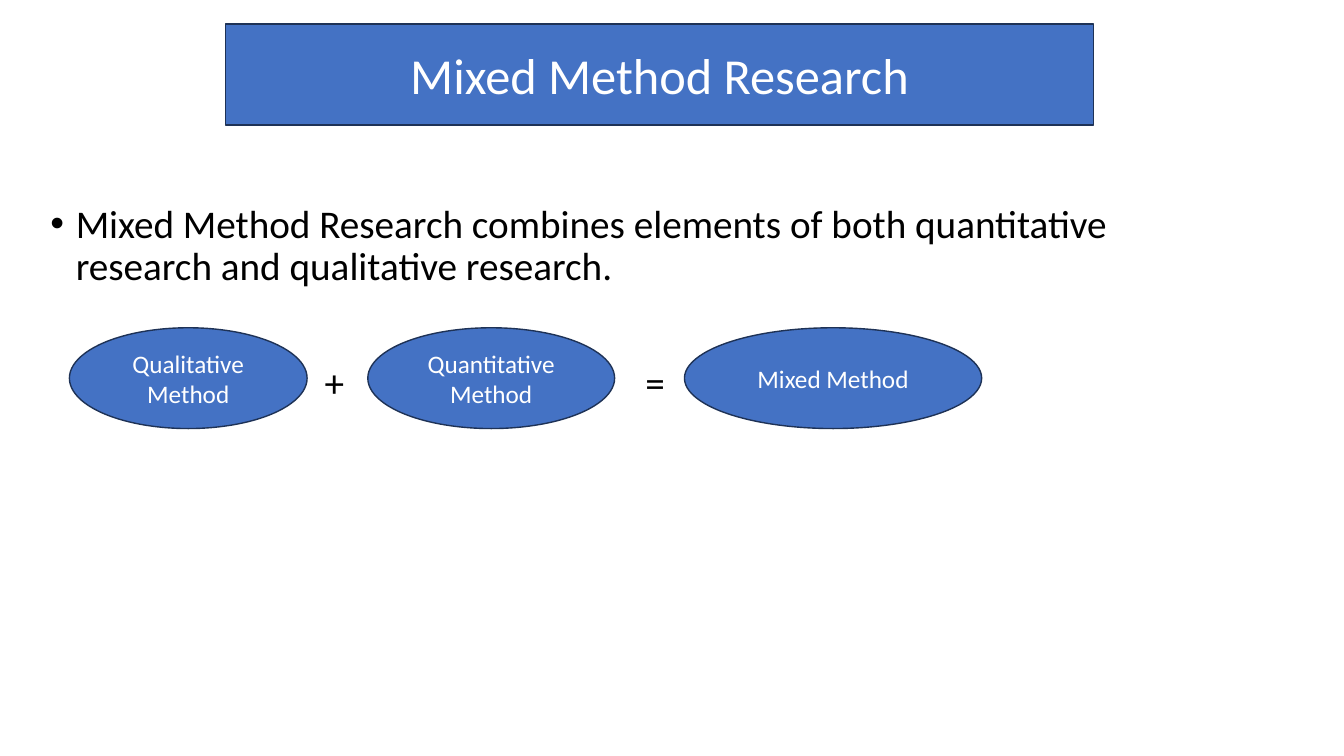
from dataclasses import dataclass

from lxml import etree
from pptx import Presentation
from pptx import util as u
from pptx.dml.color import RGBColor
from pptx.enum import shapes, text
from pptx.oxml.ns import qn


@dataclass(frozen=True)
class Theme:
    """Colours, font and type sizes of the slide."""
    font: str = "Calibri"
    fill: str = "4472C4"
    outline: str = "1E3256"
    light: str = "FFFFFF"
    dark: str = "000000"
    title_size: int = 36
    body_size: int = 28
    label_size: int = 18


class SlideBuilder:
    """Draws styled elements on the current slide."""

    def __init__(self, slide, theme):
        self.slide = slide
        self.theme = theme

    def styled_run(self, paragraph, words, size, color):
        run = paragraph.add_run()
        run.text = words
        run.font.name = self.theme.font
        run.font.size = u.Pt(size)
        run.font.color.rgb = RGBColor.from_string(color)

    def filled_shape(self, kind, box, words, size):
        shape = self.slide.shapes.add_shape(kind, *map(u.Cm, box))
        shape.shadow.inherit = False
        shape.fill.solid()
        shape.fill.fore_color.rgb = RGBColor.from_string(self.theme.fill)
        shape.line.color.rgb = RGBColor.from_string(self.theme.outline)
        shape.line.width = u.Pt(1)
        frame = shape.text_frame
        frame.word_wrap = True
        frame.vertical_anchor = text.MSO_ANCHOR.MIDDLE
        paragraph = frame.paragraphs[0]
        paragraph.alignment = text.PP_ALIGN.CENTER
        self.styled_run(paragraph, words, size, self.theme.light)

    def text_box(self, box, words):
        frame = self.slide.shapes.add_textbox(*map(u.Cm, box)).text_frame
        frame.word_wrap = True
        paragraph = frame.paragraphs[0]
        self.styled_run(paragraph, words, self.theme.body_size, self.theme.dark)
        return frame, paragraph

    def bullet(self, box, words):
        _, paragraph = self.text_box(box, words)
        paragraph.line_spacing = 0.9
        properties = paragraph._p.get_or_add_pPr()
        indent = u.Cm(0.64)
        properties.set("marL", str(indent))
        properties.set("indent", str(-indent))
        etree.SubElement(properties, qn("a:buFont"), typeface="Arial")
        etree.SubElement(properties, qn("a:buChar"), char="•")

    def operator(self, center_x, center_y, symbol):
        width, height = 1.2, 1.5
        box = (center_x - width / 2, center_y - height / 2, width, height)
        frame, paragraph = self.text_box(box, symbol)
        frame.margin_left = frame.margin_right = 0
        frame.margin_top = frame.margin_bottom = 0
        frame.vertical_anchor = text.MSO_ANCHOR.MIDDLE
        paragraph.alignment = text.PP_ALIGN.CENTER


def main():
    presentation = Presentation()
    presentation.slide_width = u.Cm(33.87)
    presentation.slide_height = u.Cm(19.05)
    slide = presentation.slides.add_slide(presentation.slide_layouts[6])
    theme = Theme()
    builder = SlideBuilder(slide, theme)

    builder.bullet(
        (1.02, 5.03, 27.33, 2.8),
        "Mixed Method Research combines elements of both quantitative "
        "research and qualitative research.",
    )
    height = 2.54
    builder.filled_shape(shapes.MSO_SHAPE.RECTANGLE, (5.69, 0.61, 21.87, height),
                         "Mixed Method Research", theme.title_size)
    methods = [
        (1.75, 5.99, "Qualitative Method"),
        (9.27, 6.22, "Quantitative Method"),
        (17.25, 7.49, "Mixed Method"),
    ]
    for left, width, label in methods:
        builder.filled_shape(shapes.MSO_SHAPE.OVAL, (left, 8.26, width, height),
                             label, theme.label_size)
    for center_x, symbol in [(8.43, "+"), (16.51, "=")]:
        builder.operator(center_x, 9.63, symbol)

    presentation.save("out.pptx")


if __name__ == "__main__":
    main()
